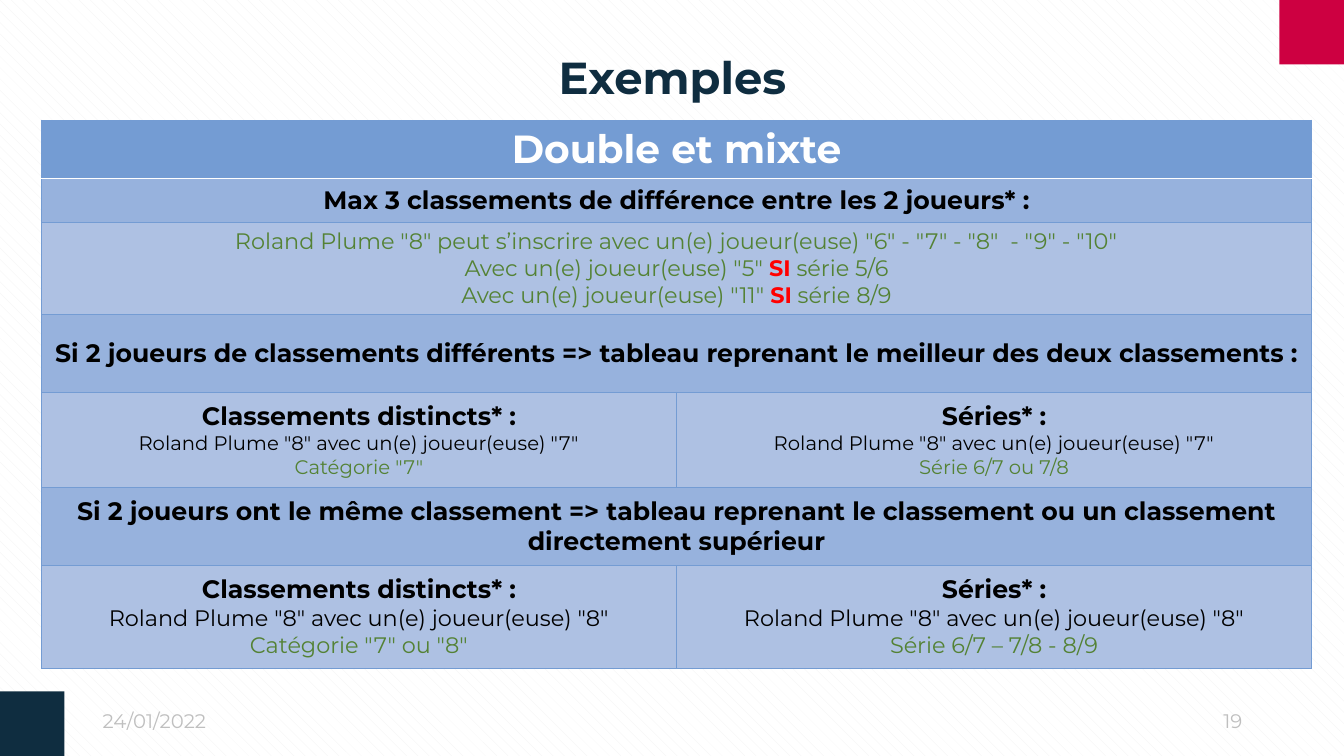
"""Build the slide of doubles and mixed ranking examples."""
from dataclasses import dataclass

from lxml import etree
from pptx import Presentation
from pptx.dml.color import RGBColor
from pptx.enum.dml import MSO_PATTERN
from pptx.enum.shapes import MSO_SHAPE
from pptx.enum.text import MSO_ANCHOR, PP_ALIGN
from pptx.oxml.ns import qn
from pptx.util import Inches, Pt

SHINGLE = MSO_PATTERN.SHINGLE
RECTANGLE = MSO_SHAPE.RECTANGLE
MIDDLE = MSO_ANCHOR.MIDDLE
LEFT, CENTER, RIGHT = PP_ALIGN.LEFT, PP_ALIGN.CENTER, PP_ALIGN.RIGHT
TITLE_ONLY = 5
FONT = "Montserrat"
COLORS = {
    "red": "CD0041", "navy": "0F2D40", "grey": "BFBFBF", "white": "FFFFFF",
    "hatch": "F2F2F2", "blue": "749CD3", "band": "97B2DD", "light": "AEC1E3",
    "black": "000000", "green": "548235", "alert": "FF0000",
}


@dataclass(frozen=True)
class Run:
    text: str
    size: int
    color: str = "black"
    bold: bool = False


@dataclass(frozen=True)
class Row:
    height: float
    fill: str
    cells: list[list[list[Run]]]


@dataclass(frozen=True)
class Square:
    left: float
    top: float
    color: str


@dataclass(frozen=True)
class Footer:
    left: float
    text: str
    align: PP_ALIGN


SQUARE_SIZE = 0.64
SQUARES = [Square(12.69, 0, "red"), Square(0, 6.86, "navy")]
FOOTERS = [Footer(0.92, "24/01/2022", LEFT), Footer(9.42, "19", RIGHT)]


def color(name: str) -> RGBColor:
    return RGBColor.from_string(COLORS[name])


def heading(text: str) -> list[Run]:
    return [Run(text, 18, bold=True)]


def band(height: float, text: str) -> Row:
    return Row(height, "band", [[heading(text)]])


def condition(partner: str, series: str) -> list[Run]:
    return [Run(f'Avec un(e) joueur(euse) "{partner}" ', 16, "green"),
            Run("SI", 16, "alert", True),
            Run(f" série {series}", 16, "green")]


def examples(height: float, size: int, partner: str, category: str, series: str) -> Row:
    pairing = [Run(f'Roland Plume "8" avec un(e) joueur(euse) "{partner}"', size)]
    return Row(height, "light", [
        [heading(title), pairing, [Run(answer, size, "green")]]
        for title, answer in (("Classements distincts* :", category), ("Séries* :", series))
    ])


ROWS = [
    Row(0.58, "blue", [[[Run("Double et mixte", 28, "white", True)]]]),
    band(0.44, "Max 3 classements de différence entre les 2 joueurs* :"),
    Row(0.91, "light", [[
        [Run('Roland Plume "8" peut s’inscrire avec un(e) joueur(euse) '
             '"6" - "7" - "8"  - "9" - "10"', 16, "green")],
        condition("5", "5/6"),
        condition("11", "8/9"),
    ]]),
    band(0.77, "Si 2 joueurs de classements différents => tableau reprenant "
               "le meilleur des deux classements :"),
    examples(0.95, 14, "7", 'Catégorie "7"', "Série 6/7 ou 7/8"),
    band(0.77, "Si 2 joueurs ont le même classement => tableau reprenant "
               "le classement ou un classement directement supérieur"),
    examples(1.02, 16, "8", 'Catégorie "7" ou "8"', "Série 6/7 – 7/8 - 8/9"),
]


def add_run(p, text: str, *, size: int, color_name: str, bold: bool = False) -> None:
    r = p.add_run()
    r.text = text
    r.font.name = FONT
    r.font.size = Pt(size)
    r.font.bold = bold
    r.font.color.rgb = color(color_name)


def set_border(cell, side: str, color_name: str, width: float) -> None:
    ln = etree.SubElement(cell._tc.get_or_add_tcPr(), qn(f"a:ln{side}"), w=str(Pt(width)))
    fill = etree.SubElement(ln, qn("a:solidFill"))
    etree.SubElement(fill, qn("a:srgbClr"), val=COLORS[color_name])


def style_cell(cell, row: Row, row_index: int) -> None:
    white_side = {0: "B", 1: "T"}.get(row_index)
    for side in "LRTB":
        if side == white_side:
            set_border(cell, side, "white", 1)
        else:
            set_border(cell, side, "blue", 0.5)
    cell.fill.solid()
    cell.fill.fore_color.rgb = color(row.fill)
    cell.vertical_anchor = MIDDLE


def fill_cell(cell, paragraphs: list[list[Run]]) -> None:
    tf = cell.text_frame
    for i, runs in enumerate(paragraphs):
        p = tf.add_paragraph() if i else tf.paragraphs[0]
        p.alignment = CENTER
        for run in runs:
            add_run(p, run.text, size=run.size, color_name=run.color, bold=run.bold)


def add_rules_table(s) -> None:
    height = sum(row.height for row in ROWS)
    table = s.shapes.add_table(len(ROWS), 2, Inches(0.41), Inches(1.19),
                               Inches(12.6), Inches(height)).table
    table.horz_banding = False
    for i, row in enumerate(ROWS):
        table.rows[i].height = Inches(row.height)
        for j in range(2):
            style_cell(table.cell(i, j), row, i)
        if len(row.cells) == 1:
            table.cell(i, 0).merge(table.cell(i, 1))
        for j, paragraphs in enumerate(row.cells):
            fill_cell(table.cell(i, j), paragraphs)


def add_square(s, square: Square) -> None:
    sp = s.shapes.add_shape(RECTANGLE, Inches(square.left), Inches(square.top),
                            Inches(SQUARE_SIZE), Inches(SQUARE_SIZE))
    sp.shadow.inherit = False
    sp.fill.solid()
    sp.fill.fore_color.rgb = color(square.color)
    sp.line.fill.background()


def add_footer(s, footer: Footer) -> None:
    tf = s.shapes.add_textbox(Inches(footer.left), Inches(6.95),
                              Inches(3), Inches(0.4)).text_frame
    tf.word_wrap = True
    tf.vertical_anchor = MIDDLE
    p = tf.paragraphs[0]
    p.alignment = footer.align
    add_run(p, footer.text, size=14, color_name="grey")


def add_title(s, text: str) -> None:
    sp = s.shapes.title
    sp.left, sp.top = Inches(0.92), Inches(0.4)
    sp.width, sp.height = Inches(11.5), Inches(0.79)
    sp.text_frame.vertical_anchor = MIDDLE
    p = sp.text_frame.paragraphs[0]
    p.alignment = CENTER
    p.line_spacing = 0.9
    add_run(p, text, size=32, color_name="navy", bold=True)


def main() -> None:
    prs = Presentation()
    prs.slide_width, prs.slide_height = Inches(13.33), Inches(7.5)
    s = prs.slides.add_slide(prs.slide_layouts[TITLE_ONLY])
    background = s.background.fill
    background.patterned()
    background.pattern = SHINGLE
    background.fore_color.rgb = color("hatch")
    background.back_color.rgb = color("white")
    for square in SQUARES:
        add_square(s, square)
    for footer in FOOTERS:
        add_footer(s, footer)
    add_title(s, "Exemples")
    add_rules_table(s)
    prs.save("out.pptx")


if __name__ == "__main__":
    main()
